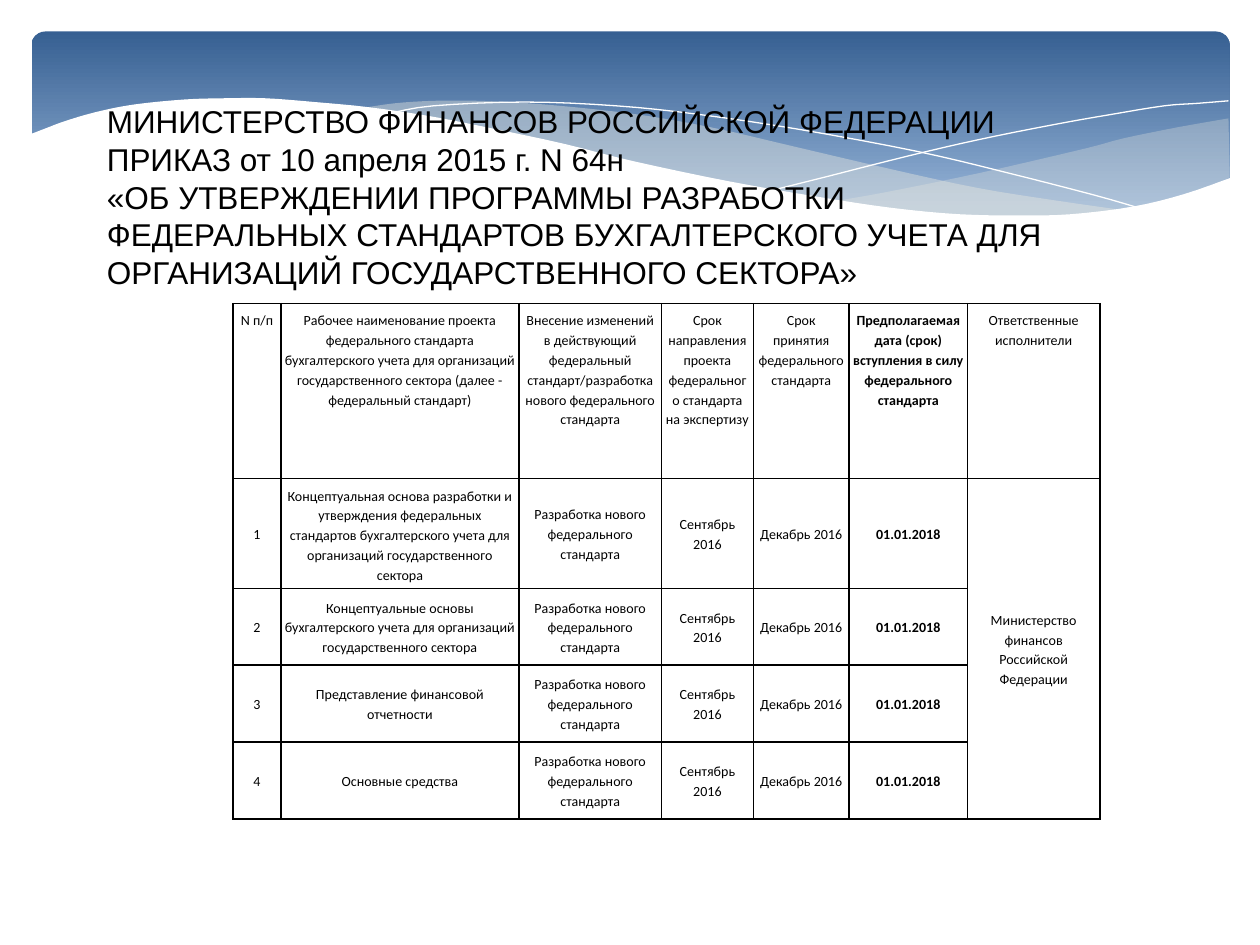
from lxml import etree
from pptx import Presentation
from pptx.dml.color import RGBColor
from pptx.enum.shapes import MSO_SHAPE
from pptx.enum.text import MSO_ANCHOR, MSO_AUTO_SIZE, PP_ALIGN
from pptx.oxml.ns import qn
from pptx.util import Pt

PX = 9144  # 100 px to the inch
ROUND_RECT = MSO_SHAPE.ROUNDED_RECTANGLE
TOP, MIDDLE = MSO_ANCHOR.TOP, MSO_ANCHOR.MIDDLE
CENTER = PP_ALIGN.CENTER
FIT_SHAPE = MSO_AUTO_SIZE.SHAPE_TO_FIT_TEXT
BLACK, WHITE, CREAM = "000000", "FFFFFF", "EEECE1"

TITLE = [
    "МИНИСТЕРСТВО ФИНАНСОВ РОССИЙСКОЙ ФЕДЕРАЦИИ ПРИКАЗ от 10 апреля 2015 г. N 64н",
    "«ОБ УТВЕРЖДЕНИИ ПРОГРАММЫ РАЗРАБОТКИ ФЕДЕРАЛЬНЫХ СТАНДАРТОВ "
    "БУХГАЛТЕРСКОГО УЧЕТА ДЛЯ ОРГАНИЗАЦИЙ ГОСУДАРСТВЕННОГО СЕКТОРА»",
]
HEADERS = [
    "N п/п",
    "Рабочее наименование проекта федерального стандарта бухгалтерского учета "
    "для организаций государственного сектора (далее - федеральный стандарт)",
    "Внесение изменений в действующий федеральный стандарт/разработка "
    "нового федерального стандарта",
    "Срок направления проекта федерального стандарта на экспертизу",
    "Срок принятия федерального стандарта",
    "Предполагаемая дата (срок) вступления в силу федерального стандарта",
    "Ответственные исполнители",
]
STANDARDS = [
    "Концептуальная основа разработки и утверждения федеральных стандартов "
    "бухгалтерского учета для организаций государственного сектора",
    "Концептуальные основы бухгалтерского учета для организаций "
    "государственного сектора",
    "Представление финансовой отчетности",
    "Основные средства",
]
SCHEDULE = ["Разработка нового федерального стандарта", "Сентябрь 2016",
            "Декабрь 2016", "01.01.2018"]
EXECUTOR = "Министерство финансов Российской Федерации"
COLS = [38, 189, 113, 73, 76, 94, 105]
ROWS = [139, 87, 61, 61, 61]
DATE_COL, EXECUTOR_COL = 5, 6

# Knots of the wave curves
RIGHT_TOP = [(975, 94), (935, 101), (891, 110), (861, 118), (779, 137), (706, 152), (661, 160)]
RIGHT_BOTTOM = [(661, 160), (719, 167), (769, 171), (814, 172), (854, 170), (889, 166),
                (921, 160), (949, 152), (976, 141)]
BAND_TOP = [(893, 167), (837, 159), (775, 149), (706, 134), (629, 116), (569, 102), (514, 92),
            (465, 86), (420, 82), (380, 80), (344, 80), (313, 82), (286, 86)]
BAND_BOTTOM = [(286, 86), (342, 94), (404, 106), (449, 116), (530, 135), (601, 150), (665, 161),
               (722, 168), (773, 172), (818, 173), (857, 171), (893, 167)]
FALLING_LINE = [(309, 90), (344, 84), (416, 81), (489, 84), (556, 91), (636, 103), (727, 120),
                (795, 136), (869, 155), (907, 166)]
RISING_LINE = [(613, 151), (653, 141), (720, 124), (776, 111), (836, 99), (881, 91),
               (924, 84), (951, 82), (975, 80)]
SHEET_EDGE = [(977, 141), (940, 154), (899, 164), (850, 170), (809, 171), (761, 170), (708, 165),
              (648, 156), (579, 144), (503, 128), (447, 114), (391, 102), (340, 92), (292, 85),
              (250, 81), (211, 78), (177, 78), (146, 79), (106, 83), (76, 89), (52, 96),
              (36, 102), (23, 107)]
SHEET_BASE = [(23, 224), (977, 224)]


def rgb(color):
    return RGBColor.from_string(color)


def smooth_curve(knots, steps=4):
    """Catmull-Rom points through the knots."""
    padded = [knots[0], *knots, knots[-1]]
    points = [knots[0]]
    for quad in zip(padded, padded[1:], padded[2:], padded[3:]):
        for t in (i / steps for i in range(1, steps + 1)):
            points.append(tuple(
                b + ((c - a) * t + (2 * a - 5 * b + 4 * c - d) * t ** 2
                     + (3 * b - a - 3 * c + d) * t ** 3) / 2
                for a, b, c, d in zip(*quad)))
    return points


class Deck:
    """Holds the style and the current slide."""
    title_font, title_size = "Arial", Pt(18)
    table_font, table_size = "Calibri", Pt(8)
    border = Pt(1)

    def __init__(self, width, height):
        self.prs = Presentation()
        self.prs.slide_width, self.prs.slide_height = width * PX, height * PX
        self.slide = self.prs.slides.add_slide(self.prs.slide_layouts[6])

    def banner(self, x, y, w, h):
        sp = self.slide.shapes.add_shape(ROUND_RECT, x * PX, y * PX, w * PX, h * PX)
        sp.adjustments[0] = 0.07
        sp.shadow.inherit = False
        sp.line.fill.background()
        sp.fill.gradient()
        sp.fill.gradient_angle = 270
        for stop, (position, color) in zip(sp.fill.gradient_stops,
                                           [(0, "376092"), (0.9, "95B3D7")]):
            stop.position, stop.color.rgb = position, rgb(color)

    def outline(self, points, close):
        points = [(round(x * PX), round(y * PX)) for x, y in points]
        builder = self.slide.shapes.build_freeform(*points[0], scale=1.0)
        builder.add_line_segments(points[1:], close=close)
        sp = builder.convert_to_shape()
        sp.shadow.inherit = False
        return sp

    def area(self, points, color, opacity=100):
        sp = self.outline(points, True)
        sp.line.fill.background()
        sp.fill.solid()
        sp.fill.fore_color.rgb = rgb(color)
        if opacity < 100:
            clr = sp.fill._xPr.find(f".//{qn('a:srgbClr')}")
            etree.SubElement(clr, qn("a:alpha"), val=str(opacity * 1000))

    def curve(self, points, color):
        sp = self.outline(points, False)
        sp.fill.background()
        sp.line.color.rgb = rgb(color)
        sp.line.width = 0

    def title(self, x, y, w, h, paragraphs):
        tf = self.slide.shapes.add_textbox(x * PX, y * PX, w * PX, h * PX).text_frame
        tf.word_wrap = True
        tf.auto_size = FIT_SHAPE
        tf.text = "\n".join(paragraphs)
        for p in tf.paragraphs:
            p.font.name, p.font.size = self.title_font, self.title_size
            p.font.color.rgb = rgb(BLACK)

    def table(self, x, y, cols, rows):
        table = self.slide.shapes.add_table(len(rows), len(cols), x * PX, y * PX,
                                            sum(cols) * PX, sum(rows) * PX).table
        for col, width in zip(table.columns, cols):
            col.width = width * PX
        for row, height in zip(table.rows, rows):
            row.height = height * PX
        for cell in table.iter_cells():
            self.cell_style(cell)
        return table

    def cell_style(self, cell):
        cell.margin_left = cell.margin_right = 3 * PX
        cell.margin_top = cell.margin_bottom = 5 * PX
        tc_pr = cell._tc.get_or_add_tcPr()
        for side in ("lnL", "lnR", "lnT", "lnB"):
            ln = etree.SubElement(tc_pr, qn(f"a:{side}"), w=str(self.border))
            fill = etree.SubElement(ln, qn("a:solidFill"))
            etree.SubElement(fill, qn("a:srgbClr"), val=BLACK)
        cell.fill.background()

    def cell_text(self, cell, text, anchor, bold):
        cell.text = text
        cell.vertical_anchor = anchor
        p = cell.text_frame.paragraphs[0]
        p.alignment, p.line_spacing = CENTER, 1.15
        p.font.name, p.font.size, p.font.bold = self.table_font, self.table_size, bold
        p.font.color.rgb = rgb(BLACK)


def main():
    deck = Deck(1000, 750)
    deck.banner(25, 25, 951, 156)
    deck.area(smooth_curve(RIGHT_TOP) + smooth_curve(RIGHT_BOTTOM), CREAM, 29)
    deck.area(smooth_curve(BAND_TOP) + smooth_curve(BAND_BOTTOM), CREAM, 40)
    deck.curve(smooth_curve(FALLING_LINE), WHITE)
    deck.curve(smooth_curve(RISING_LINE), WHITE)
    deck.area(smooth_curve(SHEET_EDGE) + SHEET_BASE, WHITE)
    deck.title(75, 76, 772, 192, TITLE)

    table = deck.table(185, 241, COLS, ROWS)
    table.cell(1, EXECUTOR_COL).merge(table.cell(len(ROWS) - 1, EXECUTOR_COL))
    body = [[str(n), name, *SCHEDULE] for n, name in enumerate(STANDARDS, 1)]
    body[0].append(EXECUTOR)
    for r, texts in enumerate([HEADERS, *body]):
        for c, text in enumerate(texts):
            deck.cell_text(table.cell(r, c), text, MIDDLE if r else TOP, c == DATE_COL)
    deck.prs.save("out.pptx")


if __name__ == "__main__":
    main()
